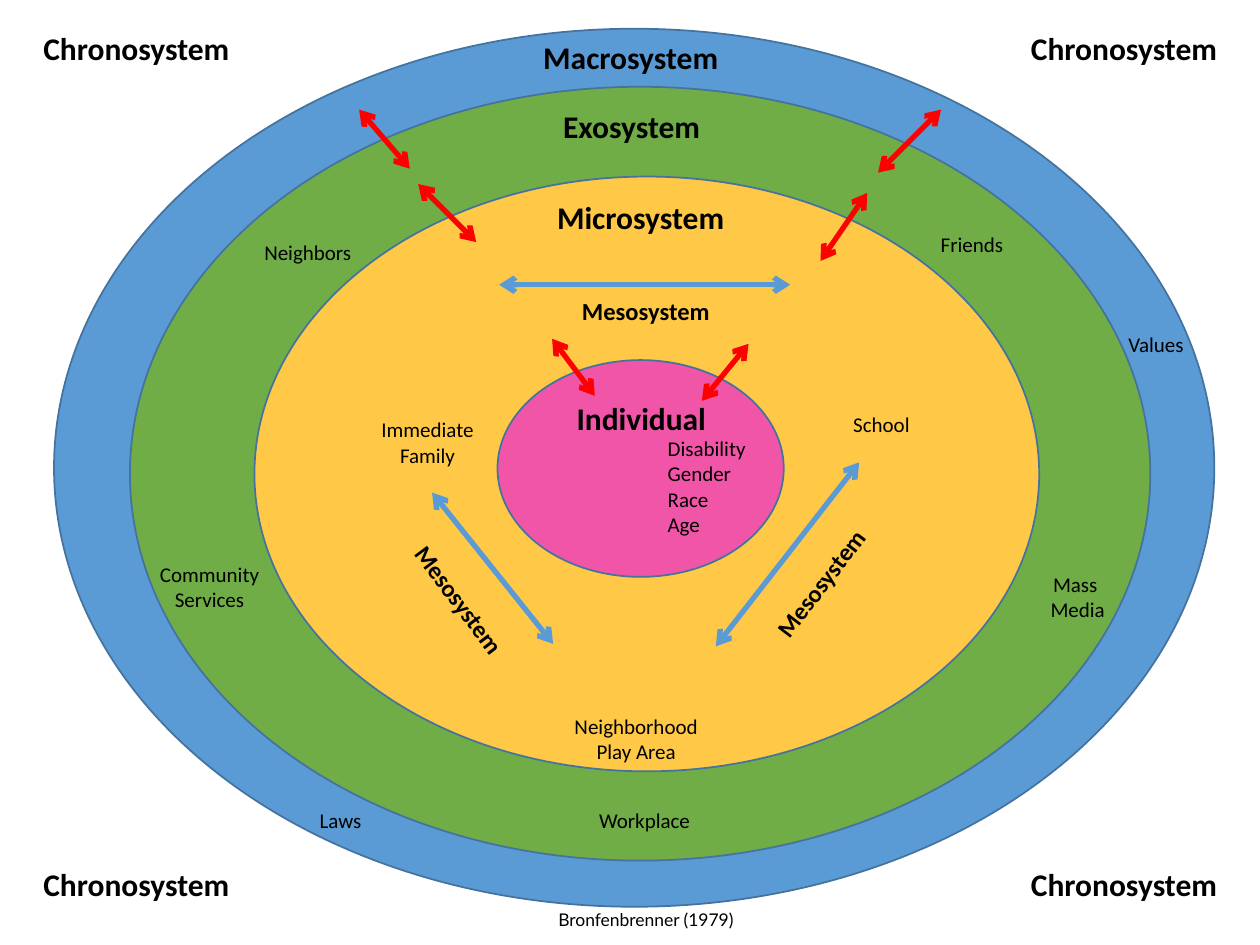
import itertools
import pptx
import pptx.util
import pptx.dml.color
import pptx.enum.shapes
import pptx.enum.text
import pptx.oxml
import pptx.oxml.ns

RGB = pptx.dml.color.RGBColor
BLUE = RGB(0x5B, 0x9B, 0xD5)
GREEN = RGB(0x70, 0xAD, 0x47)
GOLD = RGB(0xFF, 0xC8, 0x46)
PINK = RGB(0xF1, 0x55, 0xA7)
EDGE = RGB(0x43, 0x73, 0x9E)
RED = RGB(0xFF, 0x00, 0x00)
BLACK = RGB(0x00, 0x00, 0x00)

ALIGN = pptx.enum.text.PP_ALIGN
TITLE = {"size": pptx.util.Pt(18), "bold": True, "name": "Calibri"}
MESO = {**TITLE, "size": pptx.util.Pt(14)}
BODY = {"size": pptx.util.Pt(12), "bold": False, "name": "Calibri"}
CITE = {"size": pptx.util.Pt(10), "bold": False, "name": "Lato"}

RINGS = [
    (BLUE, (0.43, 0.23, 9.21, 6.97), ("Macrosystem", (4.2, 0.25, 1.61, 0.4)), [
        ("Laws", (2.12, 6.36, 1.17, 0.3)),
        ("Values", (8.59, 2.58, 1.17, 0.3)),
    ]),
    (GREEN, (1.03, 0.69, 8.1, 6.14), ("Exosystem", (4.21, 0.8, 1.61, 0.4)), [
        ("Community\nServices", (1.08, 4.41, 1.17, 0.91)),
        ("Workplace", (4.53, 6.36, 1.17, 0.3)),
        ("Mass \vMedia", (7.97, 4.49, 1.17, 0.5)),
        ("Friends", (7.13, 1.79, 1.17, 0.3)),
        ("Neighbors", (1.86, 1.85, 1.17, 0.3)),
    ]),
    (GOLD, (2.02, 1.4, 6.23, 4.72), ("Microsystem", (4.28, 1.52, 1.61, 0.4)), [
        ("School", (6.51, 3.22, 0.97, 0.71)),
        ("Neighborhood\nPlay Area", (4.34, 5.61, 1.42, 0.91)),
        ("Immediate\nFamily", (2.91, 3.26, 0.97, 0.91)),
    ]),
    (PINK, (3.95, 2.86, 2.27, 1.72), ("Individual", (4.37, 3.12, 1.44, 0.4)), []),
]
TRAITS = ("Disability\nGender\nRace\nAge", (5.2, 3.41, 0.97, 0.91))
LINKS = [
    ((4.37, 2.3, 1.51, 0.34), 0, (3.96, 2.26, 6.27, 2.26)),
    ((5.71, 4.46, 1.61, 0.34), 307.3, (5.68, 5.13, 6.82, 3.67)),
    ((2.84, 4.59, 1.61, 0.34), 53.2, (4.39, 5.11, 3.43, 3.91)),
]
PAIRS = [
    [(7.47, 0.87, 6.97, 1.37), (2.85, 0.87, 3.25, 1.34)],
    [(3.78, 1.92, 3.32, 1.46), (6.88, 1.53, 6.51, 2.07)],
    [(5.94, 2.73, 5.57, 3.18), (4.38, 2.69, 4.72, 3.14)],
]
SOURCE = ("Bronfenbrenner (1979)", (0, 7.17, 10, 0.29))


def cm(box):
    return [pptx.util.Cm(round(v * 2.54, 2)) for v in box]


def write(shapes, text, box, style, align=ALIGN.CENTER, turn=0):
    label = shapes.add_textbox(*cm(box))
    label.rotation = turn
    frame = label.text_frame
    frame.word_wrap = True
    frame.auto_size = pptx.enum.text.MSO_AUTO_SIZE.SHAPE_TO_FIT_TEXT
    frame.text = text
    for para in frame.paragraphs:
        para.alignment = align
        for run in para.runs:
            run.font.color.rgb = BLACK
            for key, value in style.items():
                setattr(run.font, key, value)
    return label


def arrow(shapes, ends, color):
    line = shapes.add_connector(pptx.enum.shapes.MSO_CONNECTOR.STRAIGHT, *cm(ends))
    line.line.color.rgb = color
    line.line.width = pptx.util.Pt(3)
    ln = line.line._get_or_add_ln()
    for tag in ("a:headEnd", "a:tailEnd"):
        tip = pptx.oxml.parse_xml(f"<{tag} {pptx.oxml.ns.nsdecls('a')} type='arrow'/>")
        ln.append(tip)
    line._element.spPr.append(
        pptx.oxml.parse_xml(f"<a:effectLst {pptx.oxml.ns.nsdecls('a')}/>"))


def main():
    deck = pptx.Presentation()
    deck.slide_width, deck.slide_height = cm((10, 7.5))
    shapes = deck.slides.add_slide(deck.slide_layouts[6]).shapes

    for color, box, title, labels in RINGS:
        ring = shapes.add_shape(pptx.enum.shapes.MSO_SHAPE.OVAL, *cm(box))
        ring.shadow.inherit = False
        ring.fill.solid()
        ring.fill.fore_color.rgb = color
        ring.line.color.rgb = EDGE
        ring.line.width = pptx.util.Pt(1)
        write(shapes, *title, TITLE)
        for label in labels:
            write(shapes, *label, BODY)
    write(shapes, *TRAITS, BODY, ALIGN.LEFT)

    group = shapes.add_group_shape().shapes
    for box, turn, ends in LINKS:
        write(group, "Mesosystem", box, MESO, turn=turn)
        arrow(group, ends, BLUE)

    for top, left in itertools.product((0.18, 6.82), (0.14, 7.98)):
        write(shapes, "Chronosystem", (left, top, 1.88, 0.4), TITLE)

    for pair in PAIRS:
        group = shapes.add_group_shape().shapes
        for ends in pair:
            arrow(group, ends, RED)

    cite = write(shapes, *SOURCE, CITE)
    cite.text_frame.auto_size = pptx.enum.text.MSO_AUTO_SIZE.NONE
    props = cite.text_frame.paragraphs[0]._p.get_or_add_pPr()
    props.set("marL", str(cm([0.25])[0]))
    props.set("indent", "0")

    deck.save("out.pptx")


if __name__ == "__main__":
    main()
